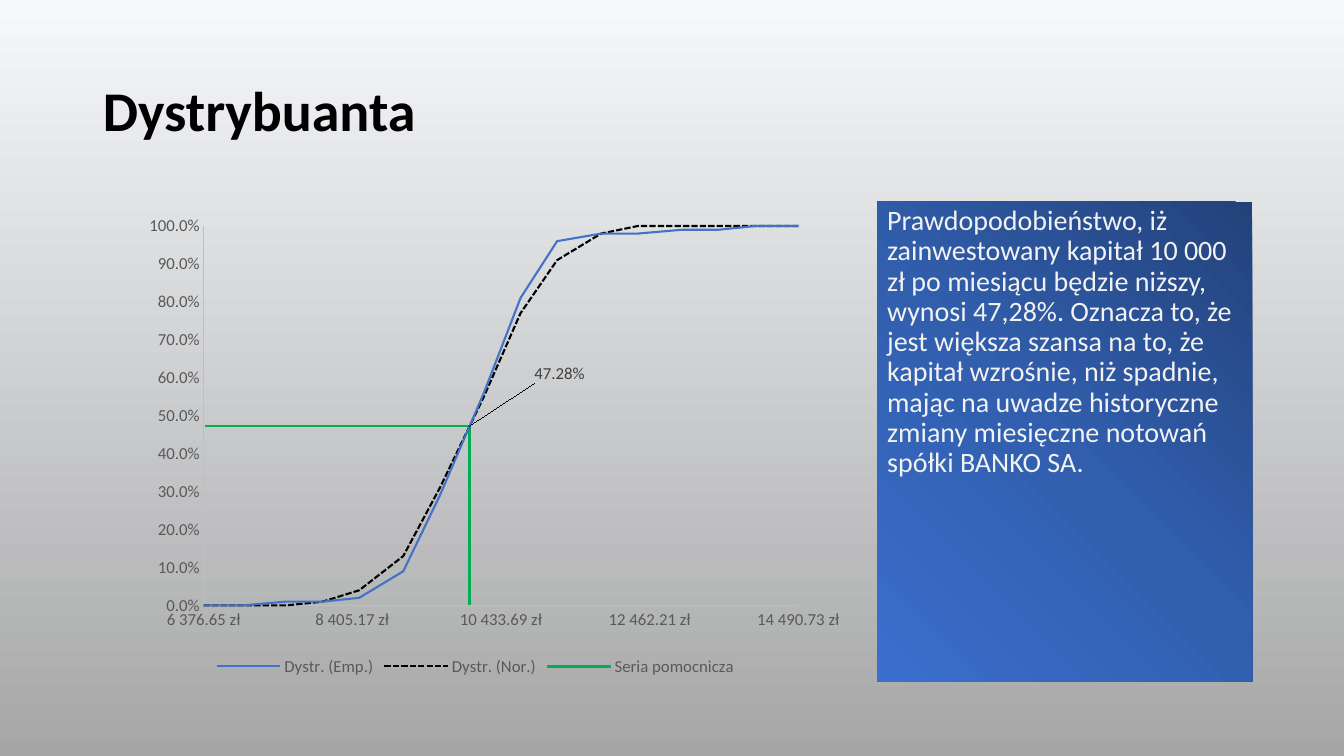
from pptx import Presentation
from pptx.chart.data import XyChartData
from pptx.dml.color import RGBColor
from pptx.enum.chart import XL_CHART_TYPE, XL_LABEL_POSITION, XL_LEGEND_POSITION, XL_TICK_MARK
from pptx.enum.dml import MSO_LINE
from pptx.enum.text import MSO_ANCHOR, PP_ALIGN
from pptx.oxml import parse_xml
from pptx.oxml.ns import nsdecls, qn
from pptx.util import Inches, Pt

SCATTER = XL_CHART_TYPE.XY_SCATTER_SMOOTH_NO_MARKERS
RIGHT = XL_LABEL_POSITION.RIGHT
BOTTOM = XL_LEGEND_POSITION.BOTTOM
NO_TICK = XL_TICK_MARK.NONE
SOLID, DASH = MSO_LINE.SOLID, MSO_LINE.SQUARE_DOT
TOP, MIDDLE = MSO_ANCHOR.TOP, MSO_ANCHOR.MIDDLE
LEFT = PP_ALIGN.LEFT

TITLE = "Dystrybuanta"
COMMENT = (
    "Prawdopodobieństwo, iż zainwestowany kapitał 10 000 zł po miesiącu będzie niższy, "
    "wynosi 47,28%. Oznacza to, że jest większa szansa na to, że kapitał wzrośnie, niż "
    "spadnie, mając na uwadze historyczne zmiany miesięczne notowań spółki BANKO SA."
)
CAPITAL = [5800, 6400, 6900, 7500, 8000, 8500, 9100, 9600, 10200,
           10700, 11200, 11800, 12300, 12900, 13400, 13900, 14500, 15000]
EMPIRICAL = [0, 0, 0, 0.01, 0.01, 0.02, 0.09, 0.29, 0.56,
             0.81, 0.96, 0.98, 0.98, 0.99, 0.99, 1, 1, 1]
NORMAL = [0, 0, 0, 0, 0.01, 0.04, 0.13, 0.31, 0.55,
          0.77, 0.91, 0.98, 1, 1, 1, 1, 1, 1]
SERIES = [
    ("Dystr. (Emp.)", CAPITAL, EMPIRICAL, "4472C4", 1.5, SOLID),
    ("Dystr. (Nor.)", CAPITAL, NORMAL, "000000", 1.5, DASH),
    ("Seria pomocnicza", [6400, 10000, 10000], [0.4728, 0.4728, 0], "00B050", 2, SOLID),
]
X_AXIS = {"minimum_scale": 6376.65, "maximum_scale": 14490.73, "major_unit": 2028.52}
Y_AXIS = {"minimum_scale": 0, "maximum_scale": 1, "major_unit": 0.1}
AXIS = {"has_major_gridlines": False, "major_tick_mark": NO_TICK, "minor_tick_mark": NO_TICK}
PLOT = {"layoutTarget": "inner", "xMode": "edge", "yMode": "edge",
        "x": 0.145, "y": 0.053, "w": 0.777, "h": 0.791}
LABEL_SHIFT = {"x": 0.08, "y": -0.11}
BACKGROUND = [(0, "F6F8FC"), (100, "A6A6A6")]
PANEL = [(0, "23427A"), (50, "315EAD"), (100, "3A6FCE")]


def rgb(value):
    return RGBColor.from_string(value)


def set_all(target, values):
    for name, value in values.items():
        setattr(target, name, value)


def set_font(font, size, color, bold=False):
    set_all(font, {"name": "Calibri", "size": Pt(size), "bold": bold})
    font.color.rgb = rgb(color)


def set_gradient(fill, element, stops, angle):
    fill.gradient()
    fill.gradient_angle = 360 - angle
    gs_list = element.find(".//" + qn("a:gsLst"))
    for gs in list(gs_list):
        gs_list.remove(gs)
    for position, color in stops:
        gs_list.append(parse_xml(
            f'<a:gs {nsdecls("a")} pos="{position * 1000}"><a:srgbClr val="{color}"/></a:gs>'))


def manual_layout(values):
    parts = "".join(f'<c:{name} val="{value}"/>' for name, value in values.items())
    return parse_xml(f'<c:layout {nsdecls("c")}><c:manualLayout>{parts}</c:manualLayout></c:layout>')


def write_text(tf, text, anchor, size, color, bold=False):
    set_all(tf, {"word_wrap": True, "vertical_anchor": anchor})
    p = tf.paragraphs[0]
    set_all(p, {"alignment": LEFT, "line_spacing": 0.9})
    r = p.add_run()
    r.text = text
    set_font(r.font, size, color, bold)


def place(sp, left, top, width, height):
    set_all(sp, {"left": Inches(left), "top": Inches(top),
                 "width": Inches(width), "height": Inches(height)})


def add_distribution_chart(s):
    data = XyChartData(number_format="0.00%")
    for name, xs, ys, *_ in SERIES:
        series = data.add_series(name)
        for x, y in zip(xs, ys):
            series.add_data_point(x, y)
    chart = s.shapes.add_chart(
        SCATTER, Inches(0.92), Inches(1.99), Inches(7.59), Inches(4.76), data).chart
    set_font(chart.font, 12, "000000")
    set_all(chart, {"has_title": False, "has_legend": True})
    set_all(chart.legend, {"position": BOTTOM, "include_in_layout": False})
    set_font(chart.legend.font, 12, "595959")
    plot = chart.plots[0]
    plot.vary_by_categories = False

    axes = [(chart.category_axis, X_AXIS, '#\\ ##0.00\\ "zł"'), (chart.value_axis, Y_AXIS, "0.0%")]
    for axis, scale, number_format in axes:
        set_all(axis, {**AXIS, **scale})
        set_all(axis.tick_labels, {"number_format": number_format, "number_format_is_linked": False})
        set_font(axis.tick_labels.font, 12, "595959")
        axis.format.line.color.rgb = rgb("BFBFBF")
        axis.format.line.width = Pt(0.75)

    for series, (_, _, _, color, width, dash) in zip(plot.series, SERIES):
        series.smooth = True
        line = series.format.line
        line.color.rgb = rgb(color)
        set_all(line, {"width": Pt(width), "dash_style": dash})

    label = plot.series[2].points[1].data_label
    set_font(label.font, 12, "404040")
    label.position = RIGHT
    d_lbl = plot.series[2]._element.find(".//" + qn("c:dLbl"))
    d_lbl.find(qn("c:idx")).addnext(manual_layout(LABEL_SHIFT))

    plot_area = chart._chartSpace.find(".//" + qn("c:plotArea"))
    for old in plot_area.findall(qn("c:layout")):
        plot_area.remove(old)
    plot_area.insert(0, manual_layout(PLOT))


def main():
    prs = Presentation()
    set_all(prs, {"slide_width": Inches(13.33), "slide_height": Inches(7.5)})
    s = prs.slides.add_slide(prs.slide_layouts[5])
    set_gradient(s.background.fill, s._element, BACKGROUND, 90)

    title = s.shapes.title
    place(title, 0.92, 0.4, 7.59, 1.45)
    write_text(title.text_frame, TITLE, MIDDLE, 40, "000000", True)

    add_distribution_chart(s)

    panel = s.shapes.add_textbox(Inches(8.7), Inches(2), Inches(3.72), Inches(4.76))
    set_gradient(panel.fill, panel._element, PANEL, 135)
    write_text(panel.text_frame, COMMENT, TOP, 20, "F2F2F2")

    prs.save("out.pptx")


if __name__ == "__main__":
    main()
